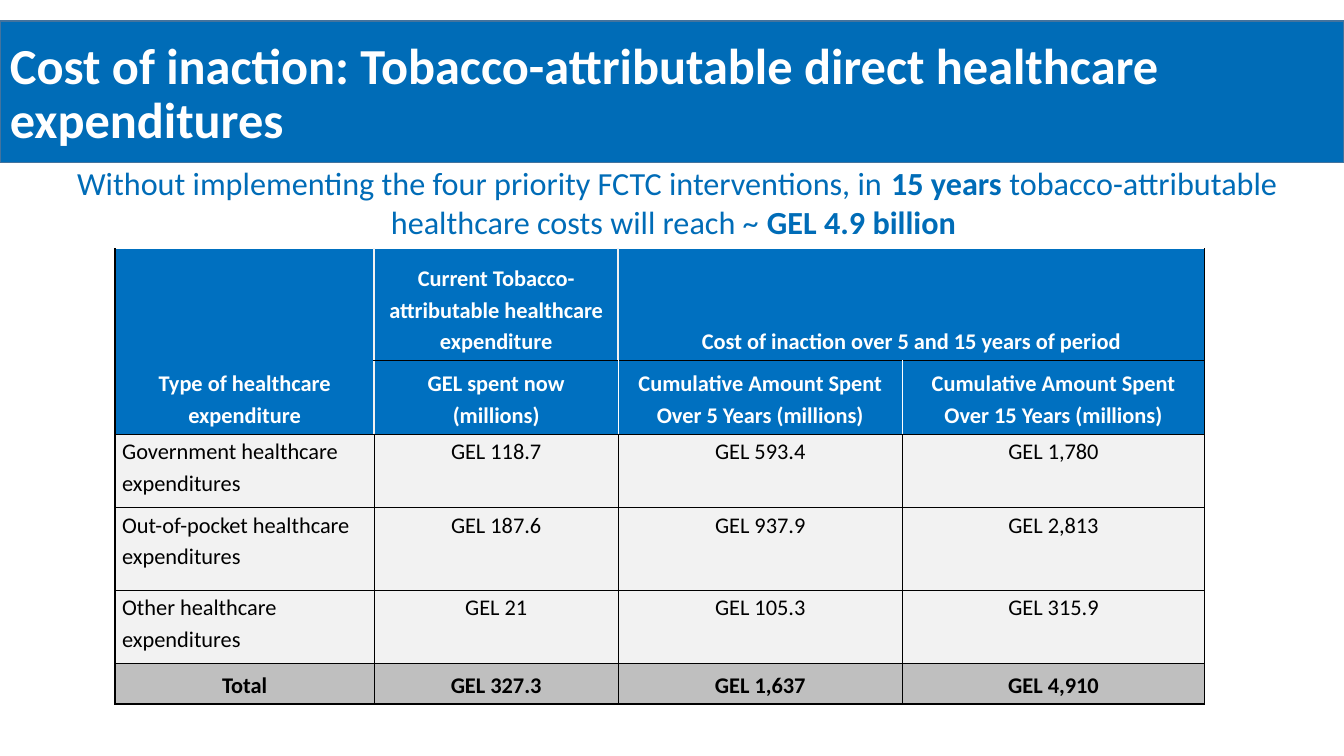
from dataclasses import dataclass

from lxml.etree import SubElement
from pptx import Presentation
from pptx.dml.color import RGBColor
from pptx.enum.shapes import MSO_SHAPE
from pptx.enum.text import MSO_ANCHOR as ANCHOR, PP_ALIGN as ALIGN
from pptx.oxml.ns import qn
from pptx.util import Cm, Pt


@dataclass(frozen=True)
class Theme:
    """Colours and type sizes of the slide."""
    font: str = "Calibri"
    band: str = "006CB7"
    band_line: str = "43739E"
    header: str = "0070C0"
    body: str = "F2F2F2"
    total: str = "BFBFBF"
    white: str = "FFFFFF"
    black: str = "000000"
    title_size: float = 36
    lead_size: float = 23
    table_size: float = 16


THEME = Theme()
TITLE = "Cost of inaction: Tobacco-attributable direct healthcare expenditures"
LEAD = [
    ("Without implementing the four priority FCTC interventions, in ", False),
    ("15 years ", True),
    ("tobacco-attributable healthcare costs will reach ~ ", False),
    ("GEL 4.9 billion ", True),
]
COLS = [6.53, 6.15, 7.16, 7.62]
ROWS = [2.82, 1.85, 1.85, 2.08, 1.85, 1.02]
CELLS = [
    ["Type of healthcare expenditure",
     "Current Tobacco-attributable healthcare expenditure",
     "Cost of inaction over 5 and 15 years of period", ""],
    ["", "GEL spent now\n(millions)",
     "Cumulative Amount Spent Over 5 Years (millions)",
     "Cumulative Amount Spent Over 15 Years (millions)"],
    ["Government healthcare expenditures", "GEL 118.7", "GEL 593.4", "GEL 1,780"],
    ["Out-of-pocket healthcare expenditures", "GEL 187.6", "GEL 937.9", "GEL 2,813"],
    ["Other healthcare expenditures", "GEL 21", "GEL 105.3", "GEL 315.9"],
    ["Total", "GEL 327.3", "GEL 1,637", "GEL 4,910"],
]


def write(tf, runs, size, color, align=ALIGN.LEFT, spacing=None, after=None):
    """Write (text, bold) runs into the first paragraph of a text frame."""
    p = tf.paragraphs[0]
    p.alignment = align
    p.line_spacing = spacing
    if after is not None:
        p.space_after = Pt(after)
    for text, bold in runs:
        for i, line in enumerate(text.split("\n")):
            if i:
                p.add_line_break()
            r = p.add_run()
            r.text = line
            r.font.name = THEME.font
            r.font.size = Pt(size)
            r.font.bold = bold
            r.font.color.rgb = RGBColor.from_string(color)


def add_text(s, left, top, width, height, runs, anchor=ANCHOR.TOP, **fmt):
    """Add a wrapping text box."""
    tf = s.shapes.add_textbox(Cm(left), Cm(top), Cm(width), Cm(height)).text_frame
    tf.word_wrap = True
    tf.vertical_anchor = anchor
    write(tf, runs, **fmt)


def add_title(s, left, top, width, height):
    """Place the title on its full-width band."""
    band = s.shapes.add_shape(MSO_SHAPE.RECTANGLE, Cm(left), Cm(top), Cm(width), Cm(height))
    band.shadow.inherit = False
    band.fill.solid()
    band.fill.fore_color.rgb = RGBColor.from_string(THEME.band)
    band.line.color.rgb = RGBColor.from_string(THEME.band_line)
    band.line.width = Pt(1)
    add_text(s, left, top + 0.33, width + 0.83, height - 0.48, [(TITLE, True)],
             anchor=ANCHOR.MIDDLE, size=THEME.title_size, color=THEME.white, spacing=0.9)


def add_lead(s, left, top, width, height):
    """Place the key message under the band."""
    add_text(s, left, top, width, height, LEAD, size=THEME.lead_size,
             color=THEME.band, align=ALIGN.CENTER)


def set_borders(cell, **sides):
    """Draw the borders L, R, T and B of a cell from (colour, points) pairs."""
    tcPr = cell._tc.get_or_add_tcPr()
    for side in "LRTB":
        color, width = sides[side]
        ln = SubElement(tcPr, qn(f"a:ln{side}"), w=str(Pt(width)))
        fill = SubElement(ln, qn("a:solidFill"))
        SubElement(fill, qn("a:srgbClr"), val=color)


def format_cell(cell, row, col, text):
    """Format a header, body or total cell according to its place."""
    header, total = row < 2, row == len(ROWS) - 1
    black = (THEME.black, 1)
    inner = black
    if header:
        inner = (THEME.white, 1) if row and col else (THEME.body, 1.5)
    set_borders(cell,
                L=inner if col else black,
                R=inner if col < len(COLS) - 1 and not (row == 0 and col == 2) else black,
                T=black if row else (THEME.white, 1),
                B=black)
    cell.fill.solid()
    fill = THEME.header if header else THEME.total if total else THEME.body
    cell.fill.fore_color.rgb = RGBColor.from_string(fill)
    if header:
        cell.vertical_anchor = ANCHOR.BOTTOM
    else:
        cell.vertical_anchor = ANCHOR.MIDDLE if total else ANCHOR.TOP
        cell.margin_left = cell.margin_right = Cm(0.18)
        cell.margin_top = cell.margin_bottom = 0
    if text:
        write(cell.text_frame, [(text, header or total)], THEME.table_size,
              THEME.white if header else THEME.black,
              align=ALIGN.CENTER if header or total or col else ALIGN.LEFT,
              spacing=1.15, after=6 if row == 1 else None)


def add_costs(s, left, top):
    """Place the expenditure table."""
    table = s.shapes.add_table(len(ROWS), len(COLS), Cm(left), Cm(top),
                               Cm(sum(COLS)), Cm(sum(ROWS))).table
    table.first_row = table.horz_banding = False
    for col, width in zip(table.columns, COLS):
        col.width = Cm(width)
    for row, height in zip(table.rows, ROWS):
        row.height = Cm(height)
    table.cell(0, 0).merge(table.cell(1, 0))
    table.cell(0, 2).merge(table.cell(0, 3))
    for i, texts in enumerate(CELLS):
        for j, text in enumerate(texts):
            format_cell(table.cell(i, j), i, j, text)


def main():
    """Build and save the slide."""
    prs = Presentation()
    prs.slide_width, prs.slide_height = Cm(33.87), Cm(19.05)
    s = prs.slides.add_slide(prs.slide_layouts[6])
    add_title(s, 0, 0.53, 33.87, 3.56)
    add_lead(s, 1.07, 3.99, 32, 2.24)
    add_costs(s, 2.9, 6.27)
    prs.save("out.pptx")


if __name__ == "__main__":
    main()
